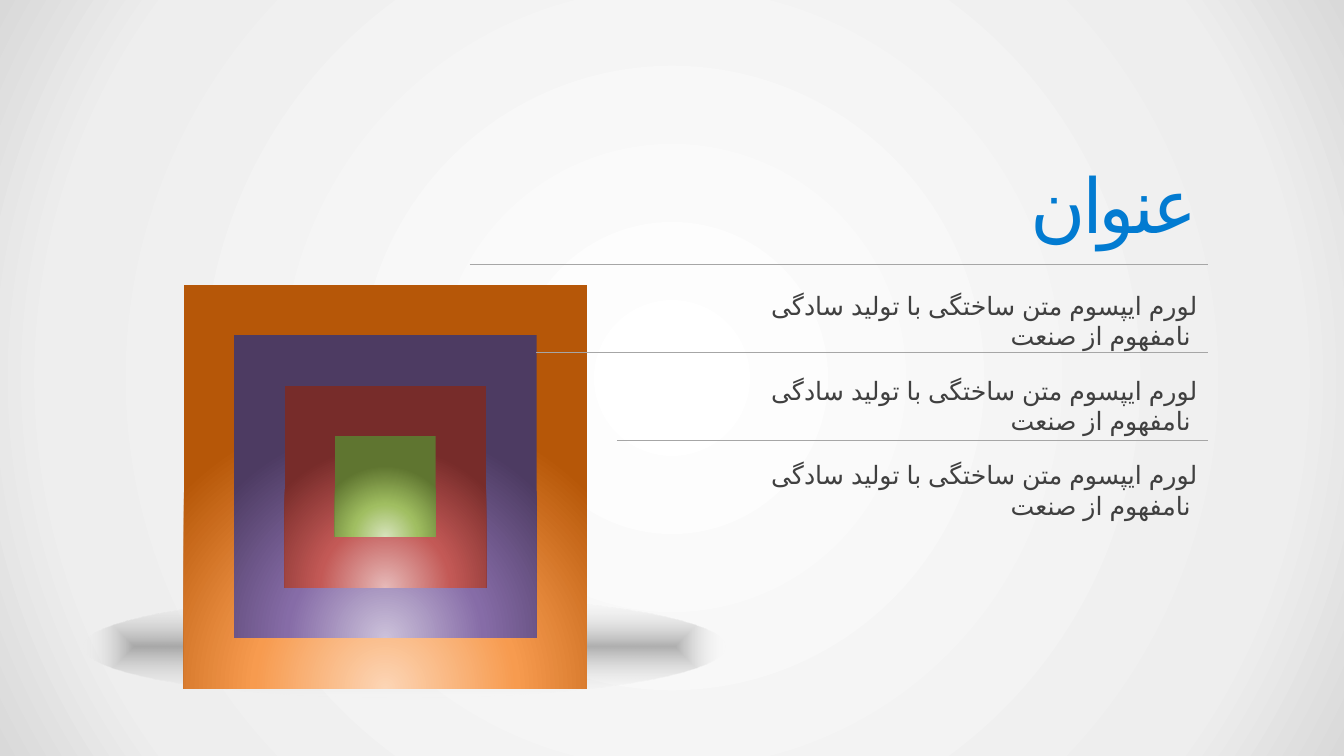
"""Build a title slide with nested glowing squares and three ruled captions."""
from dataclasses import dataclass

from lxml import etree
from pptx import Presentation
from pptx.dml.color import RGBColor
from pptx.enum import lang, shapes, text
from pptx.oxml import ns
from pptx.util import Pt

CAPTION = "لورم ایپسوم متن ساختگی با تولید سادگی نامفهوم از صنعت "
RIGHT_EDGE = 863
TEXT_LEFT, TEXT_WIDTH = 487.5, 375.1
SQUARE_LEFT, SQUARE_TOP, SQUARE_SIZE, SQUARE_INSET = 131.3, 203.6, 288, 36
RULE_TOP, RULE_STEP = 188.7, 63
CAPTION_TOP, CAPTION_STEP = 203.8, 60.5
CENTRE = (50, 50, 50, 50)
BELOW = (50, 130, 50, -30)


@dataclass(frozen=True)
class Stop:
    position: int
    colour: str
    opacity: int = 100


@dataclass(frozen=True)
class Square:
    inner: str
    middle: str
    outer: str


SQUARES = (
    Square("FCD5B5", "F79B4F", "B65708"),
    Square("CCC1DA", "866CA7", "4D3B62"),
    Square("E6B9B8", "C35956", "772C2A"),
    Square("D7E4BD", "A0BE61", "5F7530"),
)
RULE_LEFTS = (335.5, 383, 440.6)


def rgb(colour: str) -> RGBColor:
    return RGBColor.from_string(colour)


def add_child(parent, tag: str, **attributes):
    return etree.SubElement(parent, ns.qn(tag), attributes)


def fill_radial(owner, fill, stops, focus, path_kind: str = "circle") -> None:
    fill.gradient()
    gradient = owner.element.xpath(".//a:gradFill")[0]
    for child in list(gradient):
        gradient.remove(child)
    stop_list = add_child(gradient, "a:gsLst")
    for stop in stops:
        entry = add_child(stop_list, "a:gs", pos=str(stop.position * 1000))
        colour = add_child(entry, "a:srgbClr", val=stop.colour)
        if stop.opacity < 100:
            add_child(colour, "a:alpha", val=str(stop.opacity * 1000))
    radial = add_child(gradient, "a:path", path=path_kind)
    edges = {side: str(share * 1000) for side, share in zip("ltrb", focus)}
    add_child(radial, "a:fillToRect", **edges)


def add_glow(parent, kind, left: float, top: float, width: float, height: float,
             stops, focus, path_kind: str = "circle") -> None:
    shape = parent.add_shape(kind, Pt(left), Pt(top), Pt(width), Pt(height))
    shape.shadow.inherit = False
    shape.line.fill.background()
    fill_radial(shape, shape.fill, stops, focus, path_kind)


def add_rule(page, left: float, top: float) -> None:
    rule = page.shapes.add_connector(
        shapes.MSO_CONNECTOR.STRAIGHT, Pt(left), Pt(top), Pt(RIGHT_EDGE), Pt(top))
    rule.line.color.rgb = rgb("A6A6A6")
    rule.line.width = Pt(0.75)
    add_child(rule.element.spPr, "a:effectLst")


def write_text(box, wording: str, size: float, colour: str, spacing: float = 0) -> None:
    frame = box.text_frame
    frame.word_wrap = True
    frame.auto_size = text.MSO_AUTO_SIZE.SHAPE_TO_FIT_TEXT
    frame.vertical_anchor = text.MSO_ANCHOR.TOP
    para = frame.paragraphs[0]
    para.alignment = text.PP_ALIGN.RIGHT
    para.font.name = "Arial"
    para.font.size = Pt(size)
    para.font.color.rgb = rgb(colour)
    span = para.add_run()
    span.text = wording
    span.font.language_id = lang.MSO_LANGUAGE_ID.FARSI
    properties = span.font._element
    add_child(properties, "a:cs", typeface="Arial")
    if spacing:
        properties.set("spc", str(round(spacing * 100)))


def main() -> None:
    deck = Presentation()
    deck.slide_width, deck.slide_height = Pt(960), Pt(540)
    page = deck.slides.add_slide(deck.slide_layouts.get_by_name("Title Only"))
    backdrop = (Stop(0, "FFFFFF"), Stop(81, "EEEEEE"), Stop(100, "D9D9D9"))
    fill_radial(page, page.background.fill, backdrop, CENTRE)

    title = page.shapes.title
    title.left, title.top = Pt(TEXT_LEFT), Pt(109.4)
    title.width, title.height = Pt(TEXT_WIDTH), Pt(72.7)
    write_text(title, "عنوان", 54, "027BD1", spacing=-3)

    shade = (Stop(0, "0D0D0D", 31), Stop(100, "FFFFFF", 0))
    add_glow(page.shapes, shapes.MSO_SHAPE.OVAL, 59.8, 425.5, 458, 72.7,
             shade, CENTRE, "shape")

    nest = page.shapes.add_group_shape()
    for index, square in enumerate(SQUARES):
        inset = index * SQUARE_INSET
        size = SQUARE_SIZE - 2 * inset
        stops = (Stop(0, square.inner), Stop(46, square.middle), Stop(100, square.outer))
        add_glow(nest.shapes, shapes.MSO_SHAPE.RECTANGLE, SQUARE_LEFT + inset,
                 SQUARE_TOP + inset, size, size, stops, BELOW)

    for index, left in enumerate(RULE_LEFTS):
        add_rule(page, left, RULE_TOP + index * RULE_STEP)
    for index in range(3):
        box = page.shapes.add_textbox(
            Pt(TEXT_LEFT), Pt(CAPTION_TOP + index * CAPTION_STEP), Pt(TEXT_WIDTH), Pt(29))
        write_text(box, CAPTION, 18, "404040")

    deck.save("out.pptx")


if __name__ == "__main__":
    main()
